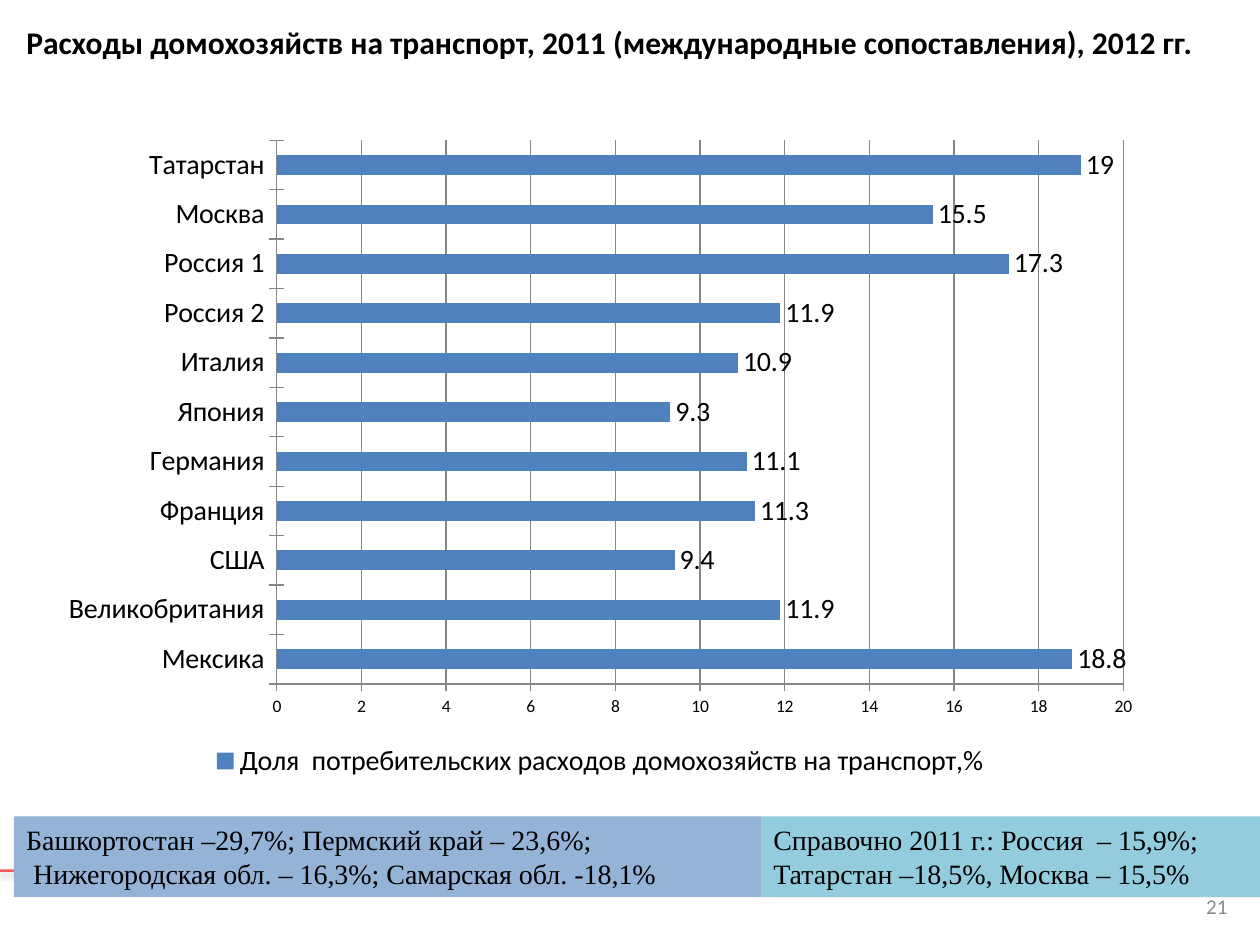
from dataclasses import dataclass

from lxml import etree
from pptx import Presentation
from pptx.chart.data import CategoryChartData
from pptx.dml.color import RGBColor
from pptx.enum.chart import XL_CHART_TYPE as Kind
from pptx.enum.chart import XL_LABEL_POSITION as Spot
from pptx.enum.chart import XL_LEGEND_POSITION as Side
from pptx.enum.chart import XL_TICK_MARK as Tick
from pptx.enum.shapes import MSO_CONNECTOR as Link
from pptx.enum.shapes import MSO_SHAPE as Form
from pptx.enum.text import MSO_ANCHOR as Anchor
from pptx.enum.text import PP_ALIGN as Align
from pptx.oxml import parse_xml
from pptx.oxml.ns import nsdecls, qn
from pptx.util import Inches, Pt

BLACK = RGBColor(0x00, 0x00, 0x00)
GRAY = RGBColor(0x89, 0x89, 0x89)
GRID = RGBColor(0x86, 0x86, 0x86)
RED = RGBColor(0xFF, 0x00, 0x00)
BLUE = RGBColor(0x4F, 0x81, 0xBD)
PALE = RGBColor(0x95, 0xB3, 0xD7)
AQUA = RGBColor(0x93, 0xCD, 0xDD)

SANS = "Calibri"
SERIF = "Times New Roman"

TITLE = "Расходы домохозяйств на транспорт, 2011 (международные сопоставления), 2012 гг."
SERIES = "Доля  потребительских расходов домохозяйств на транспорт,%"
SHARES = {
    "Мексика": 18.8,
    "Великобритания": 11.9,
    "США": 9.4,
    "Франция": 11.3,
    "Германия": 11.1,
    "Япония": 9.3,
    "Италия": 10.9,
    "Россия 2": 11.9,
    "Россия 1": 17.3,
    "Москва": 15.5,
    "Татарстан": 19,
}


@dataclass
class Note:
    left: float
    width: float
    fill: RGBColor
    lines: list[str]


NOTES = [
    Note(0.11, 5.93, PALE, [
        "Башкортостан –29,7%; Пермский край – 23,6%;",
        " Нижегородская обл. – 16,3%; Самарская обл. -18,1%",
    ]),
    Note(6.04, 3.96, AQUA, [
        "Справочно 2011 г.: Россия  – 15,9%;",
        "Татарстан –18,5%, Москва – 15,5%",
    ]),
]


def write(shape, lines: list[str], size: float = 16, font: str = SANS,
          color: RGBColor = BLACK, bold: bool = False,
          align: Align = Align.LEFT, anchor: Anchor = Anchor.TOP) -> None:
    frame = shape.text_frame
    frame.word_wrap = True
    frame.vertical_anchor = anchor
    for i, line in enumerate(lines):
        para = frame.add_paragraph() if i else frame.paragraphs[0]
        para.alignment = align
        run = para.add_run()
        run.text = line
        run.font.size = Pt(size)
        run.font.name = font
        run.font.bold = bold
        run.font.color.rgb = color


def add_rule(slide) -> None:
    """Draw the translucent red line with its soft shadow."""
    y = Inches(6.91)
    rule = slide.shapes.add_connector(Link.STRAIGHT, 0, y, Inches(10), y)
    rule.line.width = Pt(1.5)
    rule.line.color.rgb = RED
    props = rule._element.spPr
    tint = props.find(".//" + qn("a:srgbClr"))
    etree.SubElement(tint, qn("a:alpha"), val="64000")
    props.append(parse_xml(
        f'<a:effectLst {nsdecls("a")}>'
        f'<a:outerShdw blurRad="{Pt(3.1)}" dist="{Pt(1.6)}" dir="5400000" rotWithShape="0">'
        '<a:srgbClr val="000000"><a:alpha val="38000"/></a:srgbClr>'
        '</a:outerShdw></a:effectLst>'))


def add_bars(slide) -> None:
    data = CategoryChartData()
    data.categories = list(SHARES)
    data.add_series(SERIES, list(SHARES.values()))
    chart = slide.shapes.add_chart(
        Kind.BAR_CLUSTERED, Inches(0.37), Inches(1.01),
        Inches(8.79), Inches(5.21), data).chart
    chart.has_title = False
    chart.font.name = SANS
    chart.font.size = Pt(10)
    chart.font.color.rgb = BLACK

    chart.has_legend = True
    chart.legend.position = Side.BOTTOM
    chart.legend.include_in_layout = False
    chart.legend.font.size = Pt(16)

    cats, vals = chart.category_axis, chart.value_axis
    cats.tick_labels.font.size = Pt(16)
    vals.has_major_gridlines = True
    vals.minimum_scale, vals.maximum_scale, vals.major_unit = 0, 20, 2
    for axis in (cats, vals):
        axis.major_tick_mark = Tick.CROSS
        axis.minor_tick_mark = Tick.NONE
    for part in (cats.format, vals.format, vals.major_gridlines.format):
        part.line.color.rgb = GRID
        part.line.width = Pt(0.75)

    plot = chart.plots[0]
    plot.vary_by_categories = False
    plot.gap_width = 150
    bars = plot.series[0]
    bars.format.fill.solid()
    bars.format.fill.fore_color.rgb = BLUE
    labels = bars.data_labels
    labels.show_value = True
    labels.position = Spot.OUTSIDE_END
    labels.font.size = Pt(16)


def add_note(slide, note: Note) -> None:
    box = slide.shapes.add_shape(
        Form.RECTANGLE, Inches(note.left), Inches(6.48),
        Inches(note.width), Inches(0.64))
    box.shadow.inherit = False
    box.fill.solid()
    box.fill.fore_color.rgb = note.fill
    box.line.fill.background()
    write(box, note.lines, font=SERIF)


def add_box(slide, left: float, top: float, width: float, height: float):
    return slide.shapes.add_textbox(
        Inches(left), Inches(top), Inches(width), Inches(height))


def main() -> None:
    deck = Presentation()
    deck.slide_width, deck.slide_height = Inches(10), Inches(7.5)
    slide = deck.slides.add_slide(deck.slide_layouts[6])
    add_rule(slide)
    write(add_box(slide, 9.33, 6.99, 0.51, 0.4), ["21"], size=12,
          color=GRAY, align=Align.RIGHT, anchor=Anchor.MIDDLE)
    add_bars(slide)
    for note in NOTES:
        add_note(slide, note)
    write(add_box(slide, 0.11, 0.13, 9.46, 0.4), [TITLE], size=18,
          bold=True, align=Align.CENTER)
    deck.save("out.pptx")


if __name__ == "__main__":
    main()
